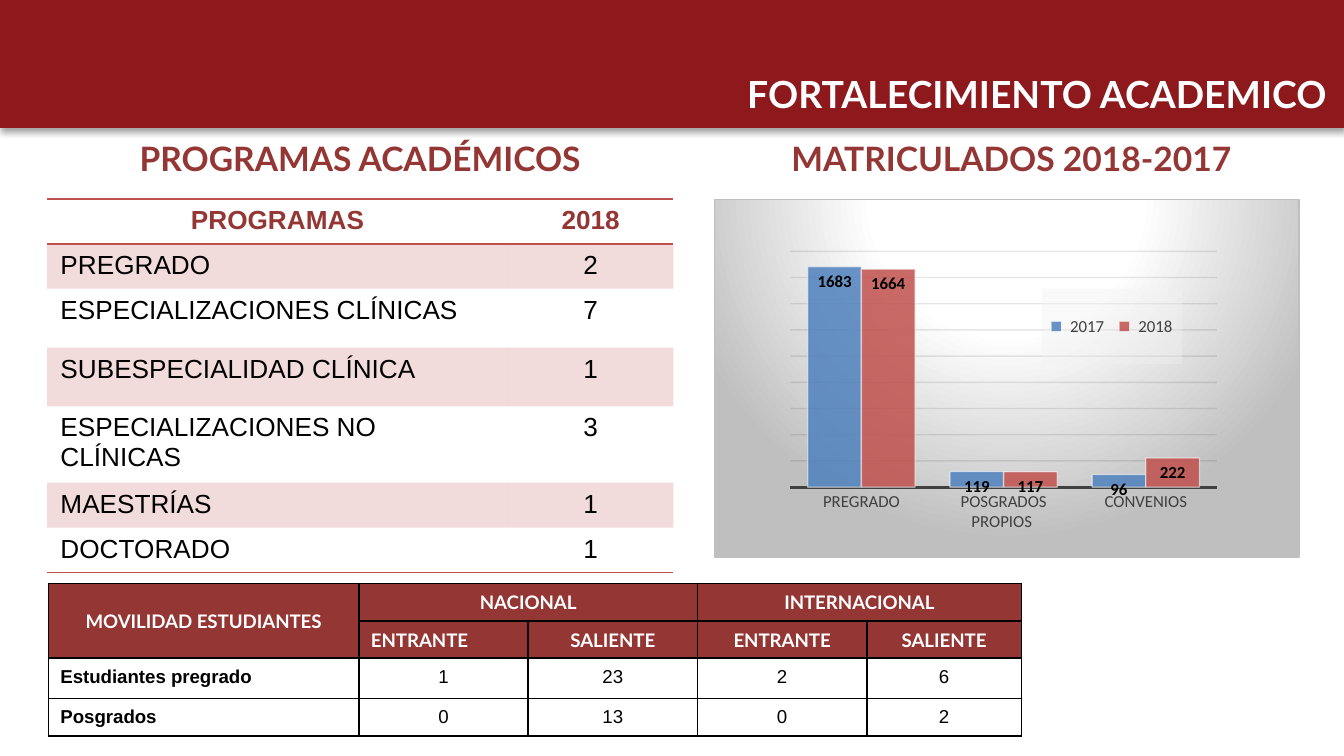
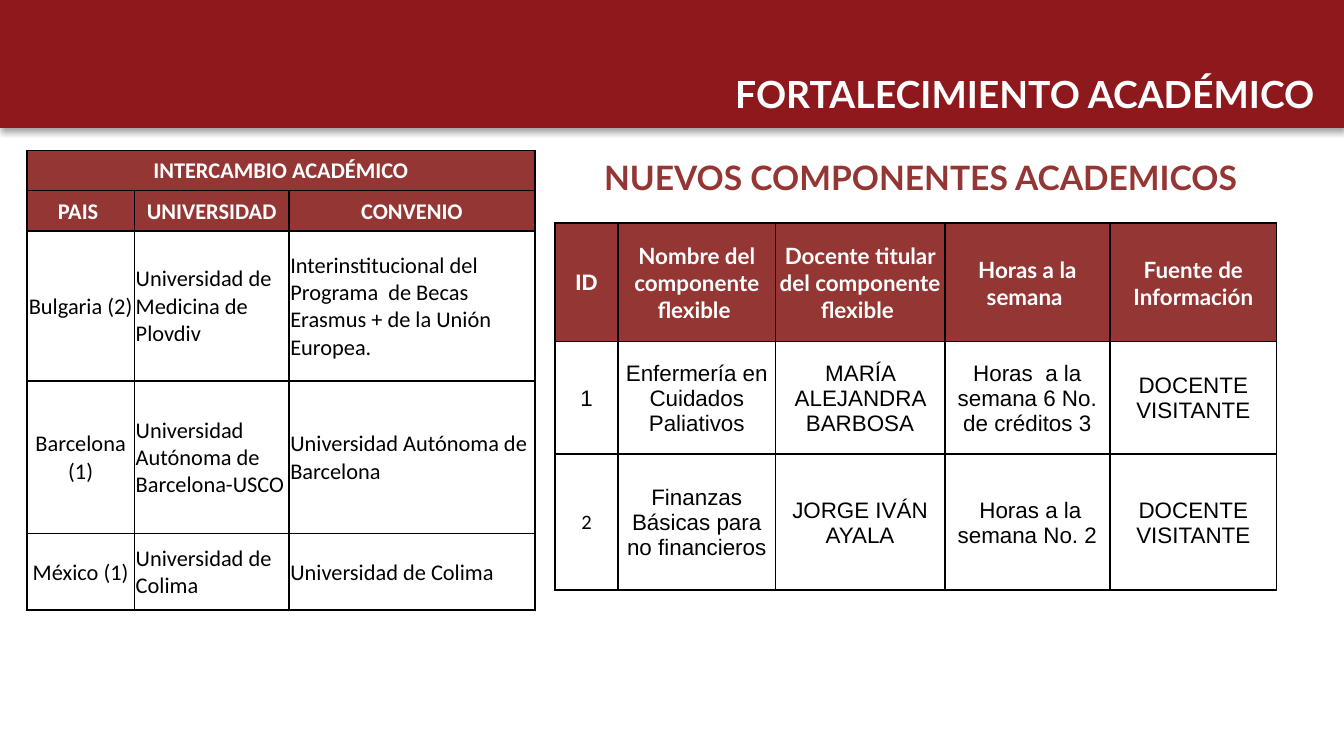
import pptx
import pptx.chart.data
import pptx.dml.color
import pptx.enum.chart
import pptx.enum.shapes
import pptx.enum.text
import pptx.oxml
import pptx.oxml.ns
import pptx.util

RGB = pptx.dml.color.RGBColor
BAND = RGB(0x8D, 0x19, 0x1D)
WINE = RGB(0x94, 0x36, 0x34)
RED = RGB(0xC0, 0x50, 0x4D)
BLUE = RGB(0x4F, 0x81, 0xBD)
WHITE = RGB(0xFF, 0xFF, 0xFF)
BLACK = RGB(0, 0, 0)
GRID = RGB(0x0D, 0x0D, 0x0D)
GREY = RGB(0x40, 0x40, 0x40)
ALIGN = {"l": pptx.enum.text.PP_ALIGN.LEFT, "c": pptx.enum.text.PP_ALIGN.CENTER,
         "r": pptx.enum.text.PP_ALIGN.RIGHT}
MIDDLE = pptx.enum.text.MSO_ANCHOR.MIDDLE
TOP = pptx.enum.text.MSO_ANCHOR.TOP
NO_STYLE = "{2D5ABB26-0587-4C30-8999-92F81FD0307C}"
UNIT = pptx.util.Inches(0.1)
TIGHT = (0.01, 0.01, 0.01, 0)
qn = pptx.oxml.ns.qn


def grid(*lengths):
    return [round(n * UNIT) for n in lengths]


def xml(text):
    head, sep, tail = text.partition(" " if " " in text.split(">")[0] else ">")
    head = head.rstrip("/")
    return pptx.oxml.parse_xml(f"{head} {pptx.oxml.ns.nsdecls('a', 'c')}{sep}{tail}")


def set_alpha(parent, percent):
    for color in parent.iter(qn("a:srgbClr")):
        color.append(xml(f'<a:alpha val="{percent * 1000}"/>'))


def write(tf, text, size=12, font="Lato", color=BLACK, bold=False, align="l",
          anchor=TOP, spacing=None):
    tf.word_wrap = True
    tf.vertical_anchor = anchor
    for i, line in enumerate(text.split("\n")):
        p = tf.paragraphs[0] if i == 0 else tf.add_paragraph()
        p.alignment = ALIGN[align]
        p.line_spacing = spacing
        r = p.add_run()
        r.text = line
        set_font(r.font, size, font, color, bold)


def set_font(f, size, font, color, bold=False):
    f.size, f.name, f.bold = pptx.util.Pt(size), font, bold
    f.color.rgb = color


def add_text(s, box, text, **fmt):
    write(s.shapes.add_textbox(*grid(*box)).text_frame, text, **fmt)


def add_heading(s, box, text, align="c"):
    add_text(s, box, text, size=18, color=WINE, bold=True, align=align)


def add_band(s, title, width):
    sp = s.shapes.add_shape(pptx.enum.shapes.MSO_SHAPE.RECTANGLE, *grid(0, 0, 100, 9.5))
    sp.fill.solid()
    sp.fill.fore_color.rgb = BAND
    sp.line.color.rgb = BAND
    sp.line.width = pptx.util.Pt(0.75)
    sp.shadow.inherit = False
    sp.element.spPr.find(qn("a:effectLst")).append(xml(
        '<a:outerShdw blurRad="40000" dist="23000" dir="5400000" rotWithShape="0">'
        '<a:srgbClr val="000000"><a:alpha val="35000"/></a:srgbClr></a:outerShdw>'))
    add_text(s, (5, 2.3, width, 9.4), title, size=20, color=WHITE, bold=True,
             align="r", anchor=MIDDLE)


def set_borders(cell, edges, color):
    tcPr = cell._tc.get_or_add_tcPr()
    for i, edge in enumerate(e for e in "LRTB" if e in edges):
        tcPr.insert(i, xml(f'<a:ln{edge} w="12700"><a:solidFill><a:srgbClr val="{color}"/>'
                           f'</a:solidFill></a:ln{edge}>'))


def add_grid_table(s, box, cols, rows, cells, style, merges=()):
    x, y, w, h = grid(*box)
    table = s.shapes.add_table(len(rows), len(cols), x, y, w, h).table
    table.first_row = table.horz_banding = False
    table._tbl.tblPr.find(qn("a:tableStyleId")).text = NO_STYLE
    for c, share in enumerate(cols):
        table.columns[c].width = round(w * share / sum(cols))
    for r, share in enumerate(rows):
        table.rows[r].height = round(h * share / sum(rows))
    for top, left, bottom, right in merges:
        table.cell(top, left).merge(table.cell(bottom, right))
    for r, line in enumerate(cells):
        for c, text in enumerate(line):
            cell = table.cell(r, c)
            look = dict(fill=None, alpha=100, edges="LRTB", edge_color=BLACK,
                        margins=(0.1, 0.05, 0.1, 0.05))
            fmt = style(r, c)
            look.update({k: fmt.pop(k) for k in list(fmt) if k in look})
            if look["fill"] is None:
                cell.fill.background()
            else:
                cell.fill.solid()
                cell.fill.fore_color.rgb = look["fill"]
                if look["alpha"] < 100:
                    set_alpha(cell._tc.tcPr, look["alpha"])
            set_borders(cell, look["edges"], look["edge_color"])
            (cell.margin_left, cell.margin_top, cell.margin_right,
             cell.margin_bottom) = map(pptx.util.Inches, look["margins"])
            if text:
                anchor = fmt.pop("anchor", TOP)
                write(cell.text_frame, text, **fmt)
                cell.vertical_anchor = anchor


def program_style(r, c):
    head = r == 0
    return dict(size=14, font="Arial", bold=head, color=WINE if head else BLACK,
                align="c" if head or c else "l", fill=RED if r % 2 else None, alpha=20,
                edges={0: "TB", 6: "B"}.get(r, ""), edge_color=RED)


def mobility_style(r, c):
    head = r < 2
    left = (r, c) == (1, 1) or (not head and c == 0)
    return dict(size=10, font="Lato" if head else "Arial", color=WHITE if head else BLACK,
                bold=head or c == 0, align="l" if left else "c", spacing=1.07,
                anchor=MIDDLE if r == 0 else TOP, fill=WINE if head else WHITE,
                margins=(0.09, 0.05, 0.09, 0.05))


def exchange_style(r, c):
    head = r < 2
    return dict(font="Calibri", color=WHITE if head else BLACK, bold=head,
                align="c" if head or c == 0 else "l", anchor=MIDDLE,
                fill=WINE if head else None, margins=TIGHT)


def component_style(r, c):
    head = r == 0
    number = (r, c) == (2, 0)
    font = "Lato" if head and c else "Calibri" if number else "Arial"
    return dict(size=11 if number else 12, font=font, color=WHITE if head else BLACK,
                bold=head, align="c", anchor=MIDDLE, fill=WINE if head else None,
                margins=TIGHT)


def manual_layout(x, y, w, h, target=""):
    return xml(f'<c:layout><c:manualLayout>{target}<c:xMode val="edge"/>'
               f'<c:yMode val="edge"/><c:x val="{x}"/><c:y val="{y}"/>'
               f'<c:w val="{w}"/><c:h val="{h}"/></c:manualLayout></c:layout>')


def place(parent, layout, index):
    for old in parent.findall(qn("c:layout")):
        parent.remove(old)
    parent.insert(index, layout)


def add_enrolment_chart(s, box):
    enum = pptx.enum.chart
    data = pptx.chart.data.CategoryChartData()
    data.categories = ["PREGRADO", "POSGRADOS PROPIOS ", "CONVENIOS"]
    data.add_series(" 2017", (1683, 119, 96))
    data.add_series(" 2018", (1664, 117, 222))
    chart = s.shapes.add_chart(enum.XL_CHART_TYPE.COLUMN_CLUSTERED, *grid(*box), data).chart
    set_font(chart.font, 10, "Calibri", BLACK)
    chart.has_title = False

    plot = chart.plots[0]
    plot.gap_width, plot.overlap = 65, 0
    plot.vary_by_categories = False
    for series, color in zip(plot.series, (BLUE, RED)):
        series.format.fill.solid()
        series.format.fill.fore_color.rgb = color
        set_alpha(series.format.fill._xPr, 85)
        line = series.format.line
        line.color.rgb = WHITE
        line.width = pptx.util.Pt(0.75)
        set_alpha(line._ln, 50)
        labels = series.data_labels
        labels.show_value = True
        labels.position = enum.XL_LABEL_POSITION.INSIDE_END
        set_font(labels.font, 9, "Calibri", BLACK, True)

    axis = chart.category_axis
    axis.major_tick_mark = axis.minor_tick_mark = enum.XL_TICK_MARK.NONE
    axis.format.line.color.rgb = GREY
    axis.format.line.width = pptx.util.Pt(1.5)
    set_font(axis.tick_labels.font, 9, "Calibri", GREY)
    values = chart.value_axis
    values.visible = False
    values.minimum_scale, values.maximum_scale, values.major_unit = 0, 1800, 200
    values.has_major_gridlines = True
    line = values.major_gridlines.format.line
    line.color.rgb = GRID
    line.width = pptx.util.Pt(0.75)
    set_alpha(line._ln, 10)

    chart.has_legend = True
    legend = chart.legend
    legend.position = enum.XL_LEGEND_POSITION.RIGHT
    legend.include_in_layout = False
    set_font(legend.font, 9, "Calibri", GREY)
    node = chart.element.find(".//" + qn("c:legend"))
    place(node, manual_layout(0.56, 0.25, 0.24, 0.21), 1)
    node.find(qn("c:overlay")).addnext(xml(
        '<c:spPr><a:solidFill><a:srgbClr val="F2F2F2"><a:alpha val="39000"/></a:srgbClr>'
        '</a:solidFill><a:ln><a:noFill/></a:ln></c:spPr>'))
    place(chart.element.find(".//" + qn("c:plotArea")),
          manual_layout(0.13, 0.145, 0.73, 0.66, '<c:layoutTarget val="inner"/>'), 0)
    chart.element.find(qn("c:chart")).addnext(xml(
        '<c:spPr><a:gradFill><a:gsLst>'
        '<a:gs pos="0"><a:srgbClr val="FFFFFF"/></a:gs>'
        '<a:gs pos="39000"><a:srgbClr val="FFFFFF"/></a:gs>'
        '<a:gs pos="100000"><a:srgbClr val="BFBFBF"/></a:gs></a:gsLst>'
        '<a:path path="circle"><a:fillToRect l="50000" t="-80000" r="50000" b="180000"/>'
        '</a:path></a:gradFill><a:ln w="9525"><a:solidFill><a:srgbClr val="BFBFBF"/>'
        '</a:solidFill></a:ln></c:spPr>'))


def add_programs_slide(s):
    add_band(s, "FORTALECIMIENTO ACADEMICO", 94.7)
    add_heading(s, (5, 9.8, 44.2, 4), "PROGRAMAS ACADÉMICOS ")
    add_grid_table(s, (3.5, 14.8, 46.6, 26.9), (3.43, 1.23),
                   (0.32, 0.32, 0.44, 0.44, 0.54, 0.32, 0.32), [
        ("PROGRAMAS", "2018"),
        ("PREGRADO", "2"),
        ("ESPECIALIZACIONES CLÍNICAS", "7"),
        ("SUBESPECIALIDAD CLÍNICA", "1"),
        ("ESPECIALIZACIONES NO\nCLÍNICAS", "3"),
        ("MAESTRÍAS", "1"),
        ("DOCTORADO", "1")], program_style)
    add_heading(s, (57.9, 9.8, 36.4, 4), "MATRICULADOS 2018-2017", align="l")
    add_grid_table(s, (3.6, 43.4, 72.4, 11.1), (2.31, 1.26, 1.26, 1.26, 1.15),
                   (0.27, 0.27, 0.3, 0.27), [
        ("MOVILIDAD ESTUDIANTES", "NACIONAL", None, "INTERNACIONAL", None),
        (None, "ENTRANTE", "SALIENTE", "ENTRANTE", "SALIENTE"),
        ("Estudiantes pregrado", "1", "23", "2", "6"),
        ("Posgrados", "0", "13", "0", "2")], mobility_style,
        merges=[(0, 0, 1, 0), (0, 1, 0, 2), (0, 3, 0, 4)])
    add_enrolment_chart(s, (53.1, 14.8, 43.6, 26.7))


def add_exchange_slide(s):
    add_band(s, "FORTALECIMIENTO ACADÉMICO", 93.8)
    add_grid_table(s, (2, 11.2, 37.8, 34.2), (0.8, 1.15, 1.83), (0.3, 0.3, 1.12, 1.14, 0.57), [
        ("INTERCAMBIO ACADÉMICO", None, None),
        ("PAIS ", "UNIVERSIDAD", "CONVENIO"),
        ("Bulgaria (2)", "Universidad de Medicina de Plovdiv",
         "Interinstitucional del Programa  de Becas  Erasmus + de la Unión Europea."),
        ("Barcelona (1)", "Universidad Autónoma de Barcelona-USCO",
         "Universidad Autónoma de Barcelona"),
        ("México (1)", "Universidad de Colima", "Universidad de Colima")],
        exchange_style, merges=[(0, 0, 0, 2)])
    add_heading(s, (42, 11.2, 53, 4), "NUEVOS COMPONENTES ACADEMICOS")
    add_grid_table(s, (41.3, 16.6, 53.7, 27.3), (0.47, 1.17, 1.26, 1.23, 1.24),
                   (0.88, 0.84, 1.01), [
        ("ID", "Nombre del componente flexible ", "Docente titular del componente flexible ",
         "Horas a la semana ", "Fuente de Información"),
        ("1", "Enfermería en Cuidados Paliativos", "MARÍA ALEJANDRA BARBOSA",
         "Horas  a la semana 6 No. de créditos 3", "DOCENTE VISITANTE"),
        ("2", "Finanzas Básicas para no financieros", "JORGE IVÁN AYALA",
         " Horas a la semana No. 2", "DOCENTE VISITANTE")], component_style)


def main():
    prs = pptx.Presentation()
    prs.slide_width, prs.slide_height = grid(100, 56.25)
    for build in (add_programs_slide, add_exchange_slide):
        build(prs.slides.add_slide(prs.slide_layouts[6]))
    prs.save("out.pptx")


if __name__ == "__main__":
    main()
